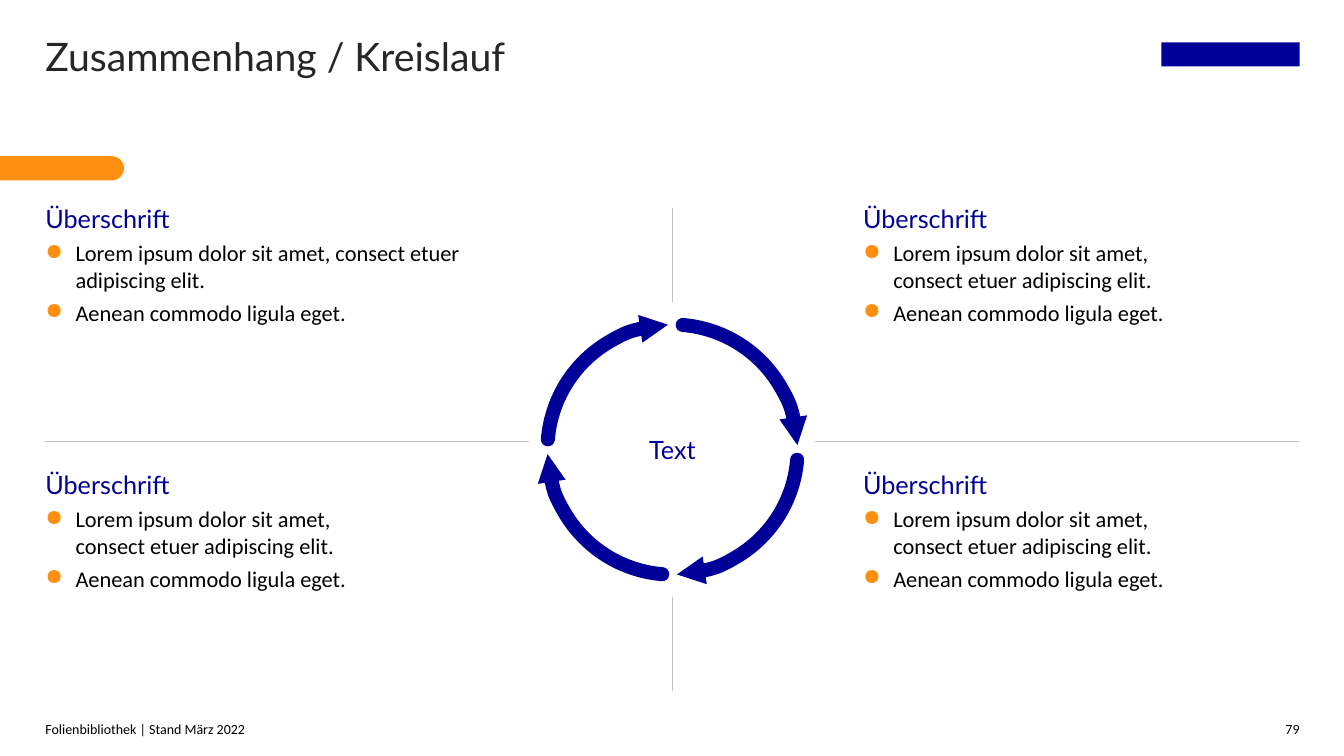
from copy import deepcopy

from pptx import Presentation
from pptx.dml.color import RGBColor
from pptx.enum.shapes import MSO_CONNECTOR, MSO_SHAPE
from pptx.enum.text import MSO_ANCHOR, PP_ALIGN
from pptx.oxml.ns import qn
from pptx.util import Inches, Pt
from lxml.etree import SubElement

BLUE, ORANGE, GREY, BLACK, DARK = "000099", "FE8F11", "BFBFBF", "000000", "262626"
LEFT, RIGHT, MIDDLE = 0.45, 12.89, 6.67
TITLE = {"name": "Lato", "size": Pt(28)}
HEADING = {"name": "Lato", "size": Pt(18)}
BODY = {"name": "Calibri", "size": Pt(16)}
SMALL = {"name": "Calibri", "size": Pt(10)}


def color(value):
    return RGBColor.from_string(value)


def set_all(target, values):
    for name, value in values.items():
        setattr(target, name, value)


def prepare_frame(shape, **options):
    frame = shape.text_frame
    margins = {f"margin_{side}": 0 for side in ("left", "top", "right", "bottom")}
    set_all(frame, {**margins, "word_wrap": True, **options})
    return frame


def write(para, text, font, fill, **options):
    para.text = text
    set_all(para, options)
    for span in para.runs:
        set_all(span.font, font)
        span.font.color.rgb = color(fill)
    for line_break in para._p.findall(qn("a:br")):
        line_break.append(deepcopy(para.runs[0]._r.rPr))


def add_text(page, box, text, font, fill, align=PP_ALIGN.LEFT, **options):
    shape = page.shapes.add_textbox(*map(Inches, box))
    frame = prepare_frame(shape, **options)
    write(frame.paragraphs[0], text, font, fill, alignment=align)


def add_plain(shapes, kind, box, fill=None):
    shape = shapes.add_shape(kind, *map(Inches, box))
    shape.shadow.inherit = False
    shape.line.fill.background()
    if fill:
        shape.fill.solid()
        shape.fill.fore_color.rgb = color(fill)
    else:
        shape.fill.background()
    return shape


def add_bullet(para):
    properties = para._p.get_or_add_pPr()
    indent = Inches(0.3)
    properties.set("marL", str(indent))
    properties.set("indent", str(-indent))
    tint = SubElement(properties, qn("a:buClr"))
    SubElement(tint, qn("a:srgbClr")).set("val", ORANGE)
    SubElement(properties, qn("a:buChar")).set("char", "●")


def add_quadrant(page, box, items):
    frame = prepare_frame(page.shapes.add_textbox(*map(Inches, box)))
    write(frame.paragraphs[0], "Überschrift", HEADING, BLUE, space_after=Pt(4))
    for item in items:
        para = frame.add_paragraph()
        write(para, item, BODY, BLACK, level=1, space_after=Pt(4))
        add_bullet(para)


def add_cycle(page, box):
    left, top, size = box
    group = page.shapes.add_group_shape()
    for turn in range(0, 360, 90):
        arc = add_plain(group.shapes, MSO_SHAPE.ARC, (left, top, size, size))
        arc.rotation = turn
        arc.adjustments[0], arc.adjustments[1] = 164.82, 214.77
        arc.line.width = Pt(10)
        arc.line.color.rgb = color(BLUE)
        stroke = arc.line._get_or_add_ln()
        stroke.set("cap", "rnd")
        tail = SubElement(stroke, qn("a:tailEnd"))
        for name, value in {"type": "triangle", "w": "sm", "len": "sm"}.items():
            tail.set(name, value)
    inset = 0.26
    inner = size - 2 * inset
    center = add_plain(group.shapes, MSO_SHAPE.OVAL, (left + inset, top + inset, inner, inner))
    frame = prepare_frame(center, vertical_anchor=MSO_ANCHOR.MIDDLE)
    write(frame.paragraphs[0], "Text", HEADING, BLUE,
          alignment=PP_ALIGN.CENTER, space_after=Pt(4))


def add_divider(page, ends):
    line = page.shapes.add_connector(MSO_CONNECTOR.STRAIGHT, *map(Inches, ends))
    line.line.width = Pt(1)
    line.line.color.rgb = color(GREY)
    SubElement(line._element.spPr, qn("a:effectLst"))


def add_frame(page):
    length, height, top = 1.23, 0.24, 1.55
    offset = (length - height) / 2
    tab = add_plain(page.shapes, MSO_SHAPE.ROUND_2_SAME_RECTANGLE,
                    (offset, top - offset, height, length), ORANGE)
    tab.rotation = 90
    tab.adjustments[0] = 0.5
    add_plain(page.shapes, MSO_SHAPE.RECTANGLE, (11.52, 0.42, 1.37, 0.24), BLUE)
    add_text(page, (LEFT, 0.32, 9.61, 0.55), "Zusammenhang / Kreislauf", TITLE, DARK)
    add_text(page, (LEFT, 7.16, 11.06, 0.16), "Folienbibliothek | Stand März 2022",
             SMALL, BLACK, vertical_anchor=MSO_ANCHOR.BOTTOM)
    add_text(page, (12.58, 7.16, 0.31, 0.16), "79", SMALL, BLACK, PP_ALIGN.RIGHT,
             vertical_anchor=MSO_ANCHOR.BOTTOM, word_wrap=False)


def main():
    deck = Presentation()
    set_all(deck, {"slide_width": Inches(13.33), "slide_height": Inches(7.5)})
    page = deck.slides.add_slide(deck.slide_layouts[6])
    add_frame(page)
    add_cycle(page, (5.43, 3.22, 2.48))

    wide = "Lorem ipsum dolor sit amet, consect etuer adipiscing elit."
    broken = "Lorem ipsum dolor sit amet,\nconsect etuer adipiscing elit."
    width = 4.33
    for left in (LEFT, RIGHT - width):
        for top, height in ((2.02, 2.09), (4.66, 2.21)):
            first = wide if (left, top) == (LEFT, 2.02) else broken
            add_quadrant(page, (left, top, width, height),
                         (first, "Aenean commodo ligula eget."))

    for start in (8.08, LEFT):
        add_divider(page, (start, 4.38, start + 4.8, 4.38))
    for start in (2.06, 5.92):
        add_divider(page, (MIDDLE, start, MIDDLE, start + 0.94))
    deck.save("out.pptx")


if __name__ == "__main__":
    main()
